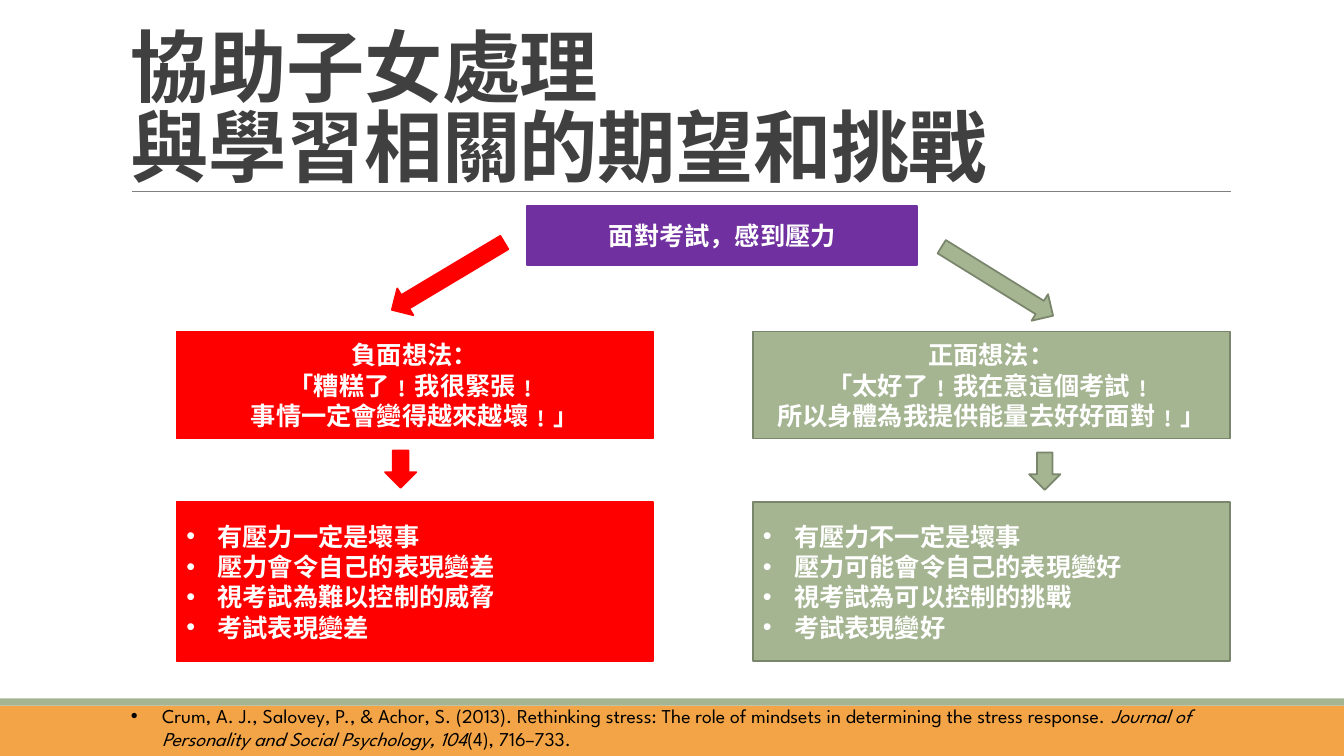
from lxml.etree import SubElement
from pptx import Presentation
from pptx.dml.color import RGBColor
from pptx.enum.shapes import MSO_CONNECTOR, MSO_SHAPE
from pptx.enum.text import MSO_ANCHOR, PP_ALIGN
from pptx.oxml.ns import qn
from pptx.util import Inches, Pt

WIDTH, HEIGHT = Inches(13.33), Inches(7.5)
COLUMNS, ROWS = 160, 90
CJK, LATIN = "Noto Sans CJK SC", "League Spartan"
PANEL_WIDTH, ARROW_WIDTH = 56.76, 3.72
RED, GREEN, DARK_GREEN = "FF0000", "A5B592", "7A866C"
PURPLE, ORANGE = "7030A0", "F3A447"

BRANCHES = [
    {
        "colours": (RED, RED),
        "left": 21,
        "thought": ["負面想法：", "「糟糕了﹗我很緊張﹗", "事情一定會變得越來越壞﹗」"],
        "effects": ["有壓力一定是壞事", "壓力會令自己的表現變差", "視考試為難以控制的威脅", "考試表現變差"],
        "slanted": (51.48, 25.08, 59.1),
        "down": (45.84, 53.64),
    },
    {
        "colours": (GREEN, DARK_GREEN),
        "left": 89.64,
        "thought": ["正面想法：", "「太好了﹗我在意這個考試﹗", "所以身體為我提供能量去好好面對﹗」"],
        "effects": ["有壓力不一定是壞事", "壓力可能會令自己的表現變好", "視考試為可以控制的挑戰", "考試表現變好"],
        "slanted": (116.88, 25.68, 301.8),
        "down": (122.52, 53.88),
    },
]
CITATION = [
    ("Crum, A. J., Salovey, P., & Achor, S. (2013). Rethinking stress: The role of mindsets "
     "in determining the stress response. ", False),
    ("Journal of Personality and Social Psychology, 104", True),
    ("(4), 716–733.", False),
]


def colour(code):
    """Turn a hex string into a colour."""
    return RGBColor.from_string(code)


def place(left, top, width, height):
    """Convert grid columns and rows to slide lengths."""
    column, row = WIDTH / COLUMNS, HEIGHT / ROWS
    return round(left * column), round(top * row), round(width * column), round(height * row)


def style_run(run, size, code, face, bold=False, italic=False):
    """Format a run for Latin and East Asian text."""
    font = run.font
    font.size, font.bold, font.italic, font.name = Pt(size), bold, italic, face
    font.color.rgb = colour(code)
    SubElement(run.font._element, qn("a:ea")).set("typeface", face)


def add_bullet(paragraph):
    """Give a paragraph a hanging round bullet."""
    properties = paragraph._p.get_or_add_pPr()
    indent = Inches(0.31)
    properties.set("marL", str(indent))
    properties.set("indent", str(-indent))
    SubElement(properties, qn("a:buFont")).set("typeface", "Arial")
    SubElement(properties, qn("a:buChar")).set("char", "•")


def add_block(slide, preset, area, fill, outline=None, rotation=0):
    """Draw a flat filled shape on the grid."""
    block = slide.shapes.add_shape(preset, *place(*area))
    block.shadow.inherit = False
    block.rotation = rotation
    block.fill.solid()
    block.fill.fore_color.rgb = colour(fill)
    if outline:
        block.line.color.rgb = colour(outline)
        block.line.width = Pt(1.25)
    else:
        block.line.fill.background()
    return block


def add_panel(slide, area, colours, lines, bulleted=False):
    """Draw a rectangle holding bold white lines."""
    frame = add_block(slide, MSO_SHAPE.RECTANGLE, area, *colours).text_frame
    frame.word_wrap = True
    frame.vertical_anchor = MSO_ANCHOR.MIDDLE
    frame.text = "\n".join(lines)
    for paragraph in frame.paragraphs:
        paragraph.alignment = PP_ALIGN.LEFT if bulleted else PP_ALIGN.CENTER
        if bulleted:
            add_bullet(paragraph)
        style_run(paragraph.runs[0], 18, "FFFFFF", CJK, bold=True)


def add_text(slide, area, anchor):
    """Add a wrapping text box and return its frame."""
    frame = slide.shapes.add_textbox(*place(*area)).text_frame
    frame.word_wrap = True
    frame.vertical_anchor = anchor
    return frame


def add_title(slide):
    """Write the two-line heading."""
    frame = add_text(slide, (14.4, 7.68, 132, 15.84), MSO_ANCHOR.BOTTOM)
    heading = frame.paragraphs[0]
    heading.text = "協助子女處理\v與學習相關的期望和挑戰"
    heading.line_spacing = 0.85
    for run in heading.runs:
        style_run(run, 56, "404040", CJK, bold=True)
        run.font._element.set("spc", "-50")


def add_citation(slide):
    """Write the reference in the footer."""
    frame = add_text(slide, (14.4, 83.16, 137.28, 6.84), MSO_ANCHOR.TOP)
    reference = frame.paragraphs[0]
    add_bullet(reference)
    for words, italic in CITATION:
        run = reference.add_run()
        run.text = words
        style_run(run, 14, "000000", LATIN, italic=italic)


def add_rule(slide):
    """Draw the thin line under the heading."""
    left, top, width, _ = place(15.72, 22.8, 130.8, 0)
    rule = slide.shapes.add_connector(MSO_CONNECTOR.STRAIGHT, left, top, left + width, top)
    rule.line.color.rgb = colour("808080")
    rule.line.width = Pt(0.5)
    SubElement(rule._element.spPr, qn("a:effectLst"))


def add_branch(slide, branch):
    """Draw one way of thinking with its arrows and effects."""
    colours, left = branch["colours"], branch["left"]
    add_panel(slide, (left, 39.48, PANEL_WIDTH, 12.72), colours, branch["thought"])
    add_panel(slide, (left, 59.76, PANEL_WIDTH, 18.96), colours, branch["effects"], bulleted=True)
    column, row, angle = branch["slanted"]
    add_block(slide, MSO_SHAPE.DOWN_ARROW, (column, row, ARROW_WIDTH, 15.6), *colours, rotation=angle)
    add_block(slide, MSO_SHAPE.DOWN_ARROW, (*branch["down"], ARROW_WIDTH, 4.44), *colours)


def main():
    """Build and save the slide."""
    deck = Presentation()
    deck.slide_width, deck.slide_height = WIDTH, HEIGHT
    slide = deck.slides.add_slide(deck.slide_layouts[6])
    add_block(slide, MSO_SHAPE.RECTANGLE, (0, 84, COLUMNS, 6), ORANGE)
    add_block(slide, MSO_SHAPE.RECTANGLE, (0, 83.16, COLUMNS, 0.84), GREEN)
    add_rule(slide)
    add_citation(slide)
    add_panel(slide, (62.76, 24.48, 46.44, 7.08), (PURPLE, PURPLE), ["面對考試，感到壓力"])
    for branch in BRANCHES:
        add_branch(slide, branch)
    add_title(slide)
    deck.save("out.pptx")


if __name__ == "__main__":
    main()
